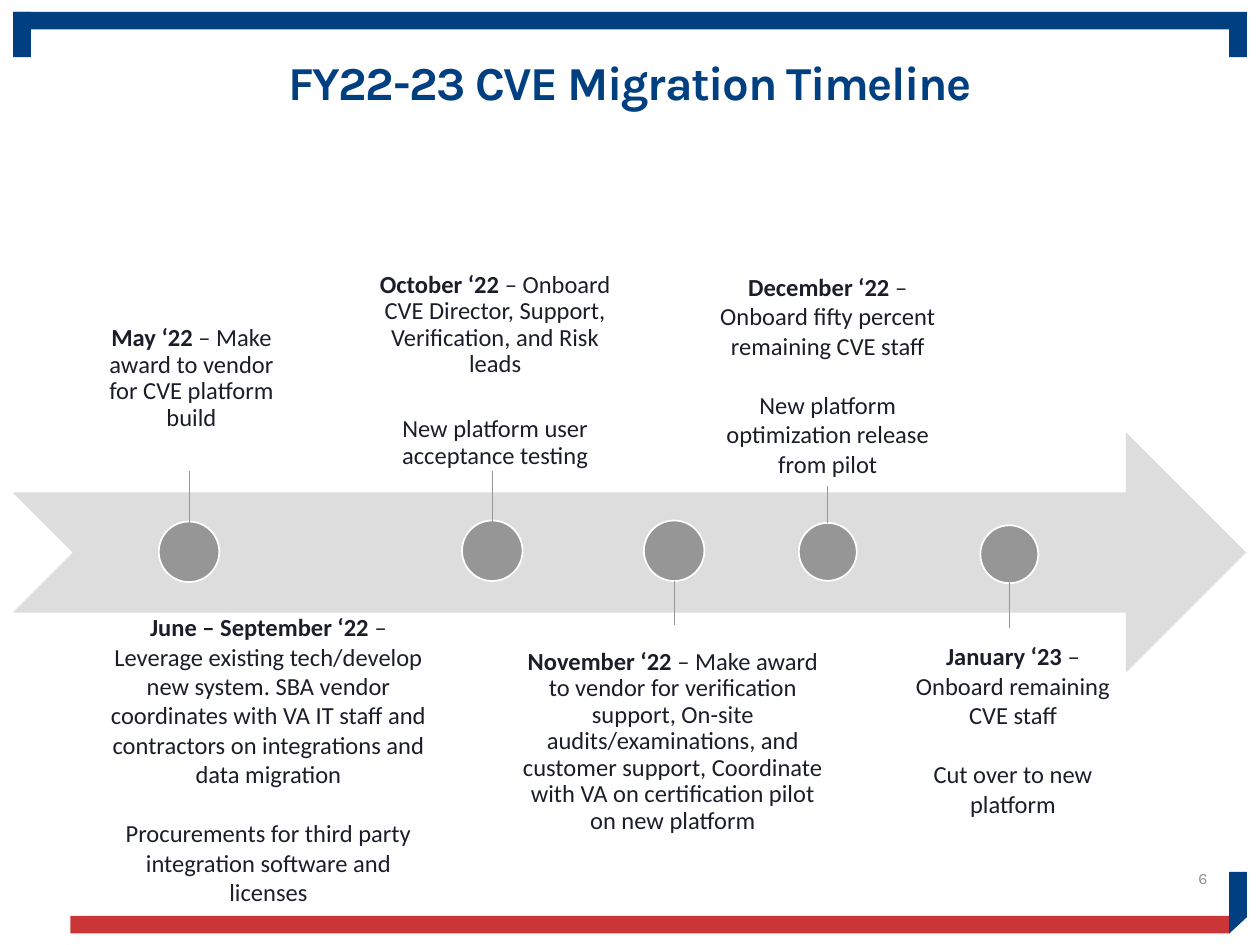
"""Build the migration timeline slide."""
from typing import NamedTuple

from lxml.etree import SubElement
from pptx import Presentation
from pptx.dml.color import RGBColor
from pptx.enum.shapes import MSO_CONNECTOR as Link, MSO_SHAPE as Kind
from pptx.enum.text import MSO_ANCHOR as Anchor, MSO_AUTO_SIZE as Fit, PP_ALIGN as Align
from pptx.oxml.ns import qn
from pptx.util import Pt

NAVY = RGBColor(0x00, 0x3F, 0x80)
RED = RGBColor(0xCC, 0x35, 0x38)
PALE = RGBColor(0xDD, 0xDD, 0xDD)
GREY = RGBColor(0x96, 0x96, 0x96)
MUTED = RGBColor(0x8D, 0x8D, 0x8E)
INK = RGBColor(0x1B, 0x1E, 0x29)
WHITE = RGBColor(0xFF, 0xFF, 0xFF)


class Box(NamedTuple):
    left: float
    top: float
    width: float
    height: float


class Dot(NamedTuple):
    left: float
    top: float
    size: float
    start: float
    end: float


class Note(NamedTuple):
    box: Box
    date: str
    text: str
    more: str = ""
    tight: bool = False
    low: bool = False


BARS = [
    (Box(7.6, 6.8, 694.8, 10.1), NAVY),
    (Box(702.4, 6.8, 10.1, 25.9), NAVY),
    (Box(7.6, 6.8, 10.1, 25.9), NAVY),
    (Box(40.3, 523.4, 662.4, 10.1), RED),
]
DOTS = [
    Dot(90.7, 298, 34.6, 303, 269.3),
    Dot(264, 297.4, 34.6, 303.8, 269.3),
    Dot(367.9, 297.4, 34.6, 331.9, 357.1),
    Dot(456.5, 298.8, 33.1, 298.8, 277.9),
    Dot(560.2, 300.2, 33.1, 333.4, 358.6),
]
NOTES = [
    Note(Box(53.3, 146.9, 112.3, 124.6), "May ‘22 ",
         "– Make award to vendor for CVE platform build", tight=True, low=True),
    Note(Box(205.9, 147.6, 154.1, 121), "October ‘22 ",
         "– Onboard CVE Director, Support, Verification, and Risk leads",
         "New platform user acceptance testing", tight=True),
    Note(Box(287.3, 362.9, 194.4, 121.7), "November ‘22 ",
         "– Make award to vendor for verification support, On-site "
         "audits/examinations, and customer support, Coordinate with VA on "
         "certification pilot on new platform", tight=True),
    Note(Box(53.3, 346.3, 200.2, 177.1), "June – September ‘22 ",
         "– Leverage existing tech/develop new system. SBA vendor coordinates "
         "with VA IT staff and contractors on integrations and data migration",
         "Procurements for third party integration software and licenses"),
    Note(Box(403.2, 151.9, 139.7, 126), "December ‘22 ",
         "– Onboard fifty percent remaining CVE staff",
         "New platform optimization release from pilot"),
    Note(Box(511.9, 362.9, 133.9, 108.7), "January ‘23 ",
         "– Onboard remaining CVE staff", "Cut over to new platform"),
]


def place(box: Box) -> list:
    return [Pt(side) for side in box]


def add_run(para, text: str, face: str, size: float, tint: RGBColor, bold=False):
    run = para.add_run()
    run.text = text
    font = run.font
    font.name, font.size, font.bold = face, Pt(size), bold
    font.color.rgb = tint
    return run


def paint(shape, tint: RGBColor) -> None:
    shape.shadow.inherit = False
    shape.fill.solid()
    shape.fill.fore_color.rgb = tint
    shape.line.fill.background()


def add_form(slide, kind: Kind, box: Box, tint: RGBColor):
    shape = slide.shapes.add_shape(kind, *place(box))
    paint(shape, tint)
    return shape


def add_fold(slide) -> None:
    left, right, top = Pt(702.4), Pt(712.5), Pt(498.2)
    pen = slide.shapes.build_freeform(left, top)
    pen.add_line_segments([(right, top), (right, Pt(524.2)), (left, Pt(533.5))])
    paint(pen.convert_to_shape(), NAVY)


def add_title(slide) -> None:
    title = slide.shapes.title
    title.left, title.top, title.width, title.height = place(Box(49.7, 28.8, 620.6, 46.8))
    frame = title.text_frame
    frame.auto_size = Fit.NONE
    frame.vertical_anchor = Anchor.TOP
    frame.margin_top = Pt(5)
    para = frame.paragraphs[0]
    para.alignment, para.line_spacing = Align.CENTER, 0.9
    run = add_run(para, "FY22-23 CVE Migration Timeline", "Karla", 27, NAVY, True)
    run.font._element.set("spc", "-80")


def add_dot(slide, dot: Dot) -> None:
    shape = add_form(slide, Kind.OVAL, Box(dot.left, dot.top, dot.size, dot.size), GREY)
    shape.line.color.rgb = WHITE
    shape.line.width = Pt(1)


def add_stem(slide, dot: Dot) -> None:
    mid = Pt(dot.left + dot.size / 2)
    stem = slide.shapes.add_connector(Link.STRAIGHT, mid, Pt(dot.start), mid, Pt(dot.end))
    stem.line.color.rgb = GREY
    stem.line.width = Pt(0.5)
    SubElement(stem._element.spPr, qn("a:effectLst"))


def add_note(slide, note: Note) -> None:
    frame = slide.shapes.add_textbox(*place(note.box)).text_frame
    frame.word_wrap = True
    if note.tight:
        frame.margin_left = frame.margin_right = Pt(7.9)
        frame.margin_top = frame.margin_bottom = Pt(7.9)
    else:
        frame.auto_size = Fit.SHAPE_TO_FIT_TEXT
    if note.low:
        frame.vertical_anchor = Anchor.BOTTOM
        frame.margin_bottom = Pt(25)
    para = frame.paragraphs[0]
    add_run(para, note.date, "Calibri", 14, INK, True)
    add_run(para, note.text, "Calibri", 14, INK)
    if note.more:
        para = frame.add_paragraph()
        para.space_before = Pt(22 if note.tight else 17)
        add_run(para, note.more, "Calibri", 14, INK)
    for para in frame.paragraphs:
        para.alignment = Align.CENTER
        para.line_spacing = 0.9 if note.tight else 1.0


def add_page(slide) -> None:
    frame = slide.shapes.add_textbox(*place(Box(535, 487.4, 162, 28.8))).text_frame
    frame.word_wrap = True
    frame.vertical_anchor = Anchor.MIDDLE
    para = frame.paragraphs[0]
    para.alignment = Align.RIGHT
    add_run(para, "6", "Karla", 9, MUTED)


def main() -> None:
    deck = Presentation()
    deck.slide_width, deck.slide_height = Pt(720), Pt(540)
    slide = deck.slides.add_slide(deck.slide_layouts[5])
    for box, tint in BARS:
        add_form(slide, Kind.RECTANGLE, box, tint)
    add_fold(slide)
    add_title(slide)
    add_form(slide, Kind.NOTCHED_RIGHT_ARROW, Box(7.2, 247, 704.9, 137.5), PALE)
    for dot in DOTS:
        add_dot(slide, dot)
    for note in NOTES:
        add_note(slide, note)
    add_page(slide)
    for dot in DOTS:
        add_stem(slide, dot)
    deck.save("out.pptx")


if __name__ == "__main__":
    main()
